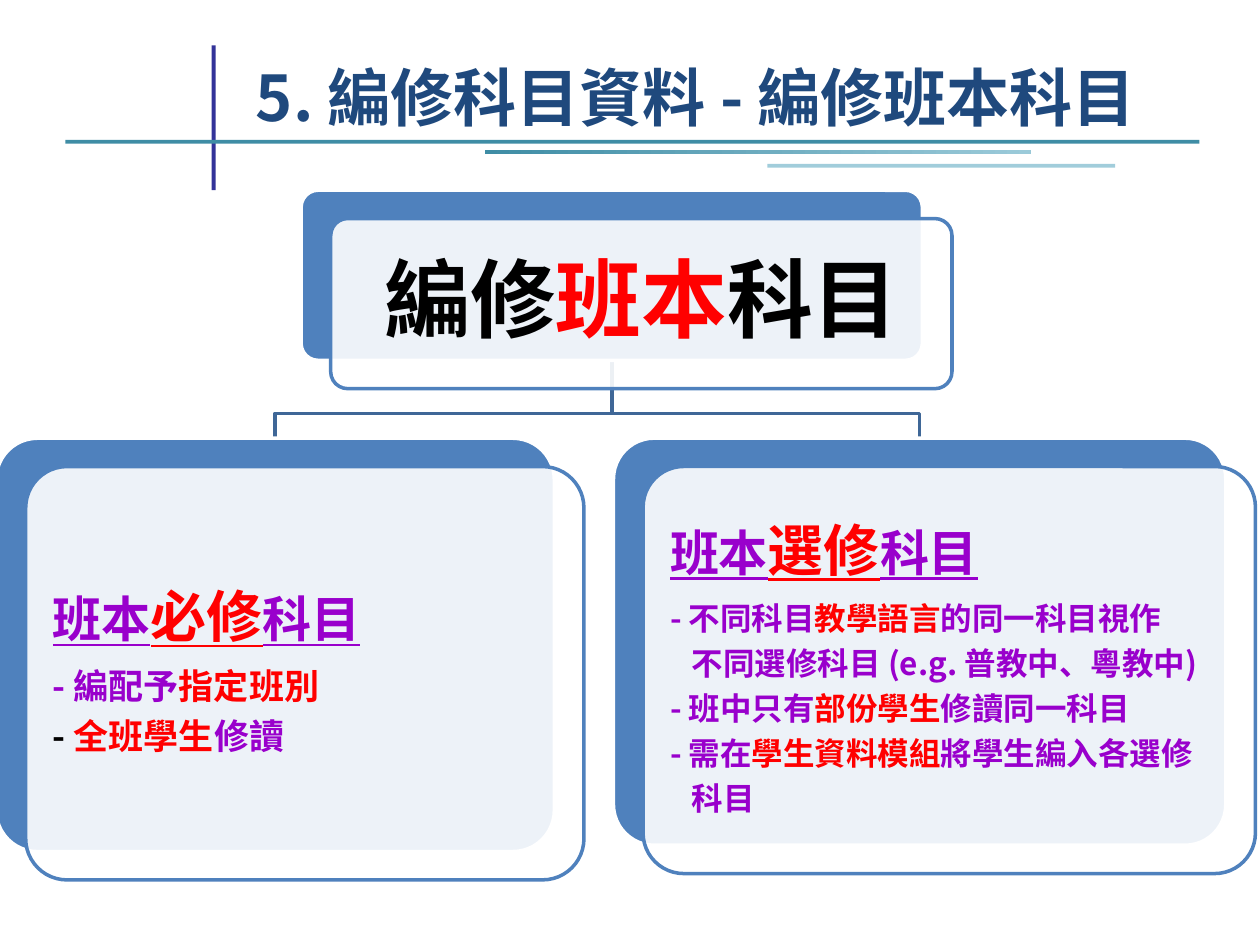
from lxml.etree import SubElement
from pptx import Presentation
from pptx.dml.color import RGBColor
from pptx.enum.shapes import MSO_SHAPE
from pptx.enum.text import MSO_ANCHOR, PP_ALIGN
from pptx.oxml.ns import qn
from pptx.util import Pt

COLORS = {
    "navy": "1F497D", "indigo": "333399", "teal": "3F8DA5", "mist": "9BCAD9",
    "pale": "A1CDDB", "blue": "4F81BD", "branch": "3F6797", "white": "FFFFFF",
    "black": "000000", "red": "FF0000", "purple": "9900CC",
}
CJK = "Noto Sans CJK TC"
TITLE = "5. 編修科目資料 - 編修班本科目"
RULES = [
    ((121, 25.9, 2.2, 82.8), "indigo", None),
    ((37.4, 79.9, 648, 2.2), "teal", None),
    ((277.2, 85.7, 311.8, 2.2), "teal", "mist"),
    ((438.5, 93.6, 198.7, 2.2), "pale", None),
]
HEAD_STYLE = {"size": 49, "font": "Lato", "underline": False}


def heading(kind):
    return 0, [("班本", "purple", 28, True), (kind, "red", 32, True), ("科目", "purple", 28, True)]


def detail(size, *parts, indent=0):
    return indent, [(text, color, size, False) for text, color in parts]


ROOT = {
    "box": (172.1, 108.7, 355, 97.2), "inset": 14.4, "font": "Lato", "align": PP_ALIGN.CENTER,
    "lines": [detail(49, ("編修", "black"), ("班本", "red"), ("科目", "black"))],
}
BRANCHES = [
    {
        "box": (-2.2, 250.4, 319, 236.2), "inset": 8.64, "font": CJK, "align": PP_ALIGN.LEFT,
        "lines": [
            heading("必修"),
            detail(20, ("- 編配予", "purple"), ("指定班別", "red")),
            detail(20, ("- ", "black"), ("全班學生", "red"), ("修讀", "purple")),
        ],
    },
    {
        "box": (350.6, 250.4, 349.9, 232.6), "inset": 8.64, "font": CJK, "align": PP_ALIGN.LEFT,
        "lines": [
            heading("選修"),
            detail(18, ("- 不同科目", "purple"), ("教學語言", "red"), ("的同一科目視作", "purple")),
            detail(18, ("不同選修科目 (e.g. 普教中、粵教中)", "purple"), indent=12.5),
            detail(18, ("- 班中只有", "purple"), ("部份學生", "red"), ("修讀同一科目", "purple")),
            detail(18, ("- 需在", "purple"), ("學生資料模組", "red"), ("將學生編入各選修", "purple")),
            detail(18, ("科目", "purple"), indent=12.5),
        ],
    },
]
FRONT_SHIFT = (16.9, 16.2)
CORNER = 0.1
BRANCH_BEND = 236.2


def rgb(name):
    return RGBColor.from_string(COLORS[name])


def points(values):
    return [Pt(value) for value in values]


def add_run(paragraph, text, color, size, font, underline=False):
    run = paragraph.add_run()
    run.text = text
    run.font.size = Pt(size)
    run.font.bold = True
    if underline:
        run.font.underline = True
    run.font.color.rgb = rgb(color)
    run.font.name = font
    SubElement(run.font._element, qn("a:ea")).set("typeface", CJK)


def add_rule(slide, box, color, end_color):
    rule = slide.shapes.add_shape(MSO_SHAPE.RECTANGLE, *points(box))
    rule.shadow.inherit = False
    rule.line.fill.background()
    if end_color:
        rule.fill.gradient()
        rule.fill.gradient_angle = 0
        for stop, name, position in zip(rule.fill.gradient_stops, (color, end_color), (0, 1)):
            stop.color.rgb = rgb(name)
            stop.position = position
    else:
        rule.fill.solid()
        rule.fill.fore_color.rgb = rgb(color)


def add_branch_line(slide, start, end):
    builder = slide.shapes.build_freeform(*points(start), scale=1.0)
    corners = [(start[0], BRANCH_BEND), (end[0], BRANCH_BEND), end]
    builder.add_line_segments([points(corner) for corner in corners], close=False)
    branch = builder.convert_to_shape()
    branch.shadow.inherit = False
    branch.fill.background()
    branch.line.color.rgb = rgb("branch")
    branch.line.width = Pt(2)


def add_panel(slide, box, fill, line, alpha=None):
    panel = slide.shapes.add_shape(MSO_SHAPE.ROUNDED_RECTANGLE, *points(box))
    panel.adjustments[0] = CORNER
    panel.shadow.inherit = False
    panel.fill.solid()
    panel.fill.fore_color.rgb = rgb(fill)
    panel.line.color.rgb = rgb(line)
    panel.line.width = Pt(2)
    if alpha:
        color = panel._element.spPr.find(qn("a:solidFill")).find(qn("a:srgbClr"))
        SubElement(color, qn("a:alpha")).set("val", str(alpha * 1000))


def add_card(slide, card):
    left, top, width, height = card["box"]
    front_left, front_top = left + FRONT_SHIFT[0], top + FRONT_SHIFT[1]
    add_panel(slide, card["box"], "blue", "white")
    add_panel(slide, (front_left, front_top, width, height), "white", "blue", 90)

    margin = CORNER * min(width, height) * 0.29
    text_box = slide.shapes.add_textbox(*points(
        (front_left + margin, front_top + margin, width - 2 * margin, height - 2 * margin)))
    frame = text_box.text_frame
    frame.word_wrap = True
    frame.vertical_anchor = MSO_ANCHOR.MIDDLE
    frame.margin_left = frame.margin_right = Pt(card["inset"])
    frame.margin_top = frame.margin_bottom = Pt(card["inset"])
    for index, (indent, runs) in enumerate(card["lines"]):
        paragraph = frame.add_paragraph() if index else frame.paragraphs[0]
        paragraph.alignment = card["align"]
        paragraph.line_spacing = 0.9
        properties = paragraph._p.get_or_add_pPr()
        space_after = SubElement(properties, qn("a:spcAft"))
        SubElement(space_after, qn("a:spcPct")).set("val", "35000")
        if indent:
            properties.set("marL", str(Pt(indent)))
        for text, color, size, underline in runs:
            add_run(paragraph, text, color, size, card["font"], underline)


def main():
    deck = Presentation()
    deck.slide_width, deck.slide_height = Pt(720), Pt(540)
    slide = deck.slides.add_slide(deck.slide_layouts[5])

    for rule in RULES:
        add_rule(slide, *rule)

    title = slide.shapes.title
    title.left, title.top, title.width, title.height = points((139, 20.2, 563.8, 59.8))
    title.text_frame.vertical_anchor = MSO_ANCHOR.BOTTOM
    title.text_frame.paragraphs[0].alignment = PP_ALIGN.LEFT
    add_run(title.text_frame.paragraphs[0], TITLE, "navy", 36, CJK)

    left, top, width, height = ROOT["box"]
    trunk = (left + width / 2, top + height)
    for branch in reversed(BRANCHES):
        branch_left, branch_top, branch_width, _ = branch["box"]
        add_branch_line(slide, trunk, (branch_left + branch_width / 2, branch_top))
    for card in [ROOT, *BRANCHES]:
        add_card(slide, card)

    deck.save("out.pptx")


if __name__ == "__main__":
    main()
